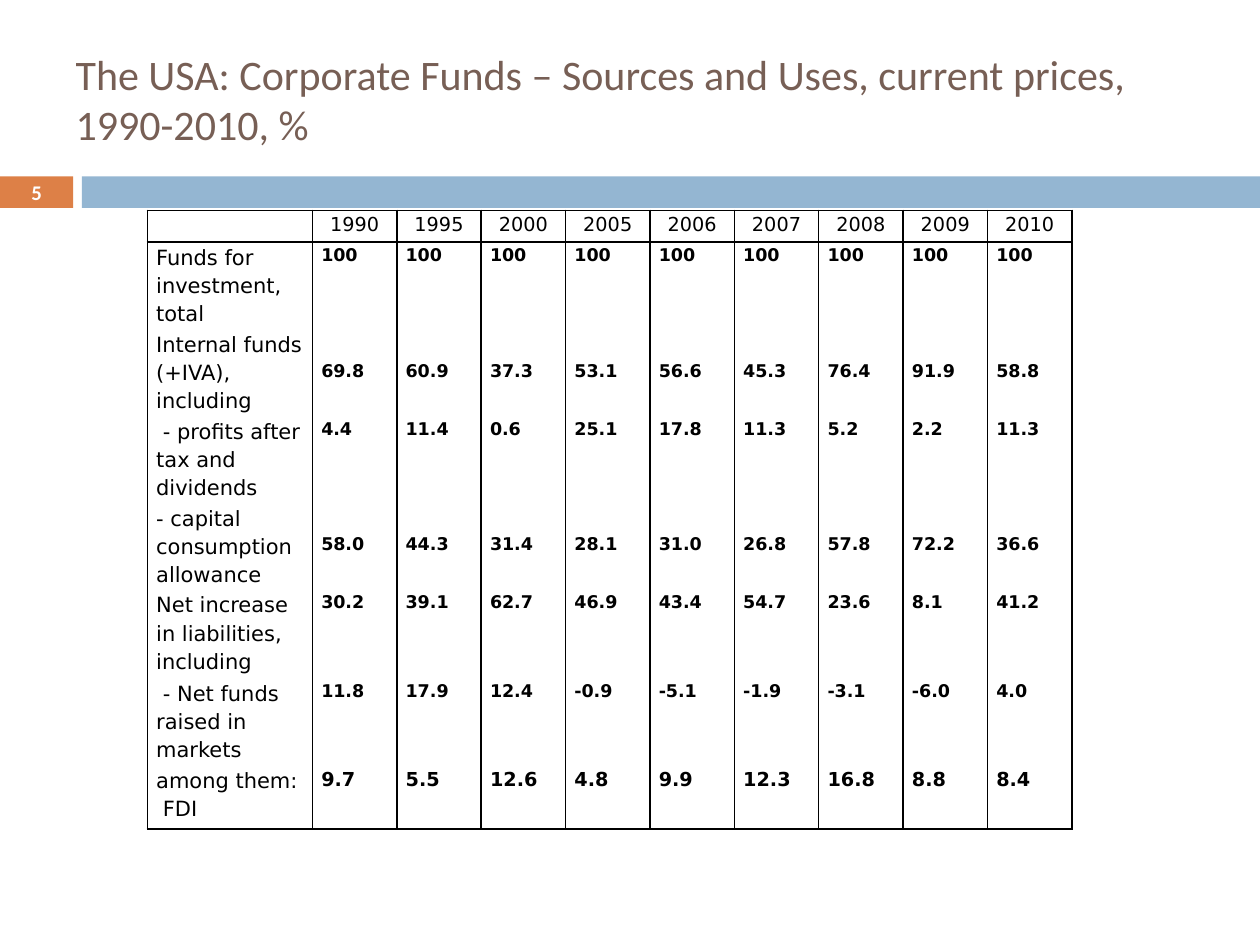
from lxml.etree import SubElement
from pptx import Presentation
from pptx.dml.color import RGBColor
from pptx.enum.shapes import MSO_SHAPE
from pptx.enum.text import MSO_ANCHOR, PP_ALIGN
from pptx.oxml.ns import qn
from pptx.util import Inches, Pt

TITLE = "The USA: Corporate Funds – Sources and Uses, current prices, 1990-2010, %"
PAGE_NUMBER = "5"
YEARS = ["1990", "1995", "2000", "2005", "2006", "2007", "2008", "2009", "2010"]
# Row height, label lines, label row span, values, value size
ROWS = [
    (0.62, ["Funds for investment,", "total"], 1, ["100"] * len(YEARS), 10),
    (0.23, ["Internal funds (+IVA),", "including"], 2, [], 10),
    (0.39, [], 1, ["69.8", "60.9", "37.3", "53.1", "56.6", "45.3", "76.4", "91.9", "58.8"], 10),
    (0.66, [" - profits after tax and dividends"], 1,
     ["4.4", "11.4", "0.6", "25.1", "17.8", "11.3", "5.2", "2.2", "11.3"], 10),
    (0.23, ["- capital consumption allowance"], 2, [], 10),
    (0.39, [], 1, ["58.0", "44.3", "31.4", "28.1", "31.0", "26.8", "57.8", "72.2", "36.6"], 10),
    (0.70, ["Net increase in liabilities, including"], 1,
     ["30.2", "39.1", "62.7", "46.9", "43.4", "54.7", "23.6", "8.1", "41.2"], 10),
    (0.67, [" - Net funds raised in markets"], 1,
     ["11.8", "17.9", "12.4", "-0.9", "-5.1", "-1.9", "-3.1", "-6.0", "4.0"], 10),
    (0.51, ["among them:  FDI"], 1,
     ["9.7", "5.5", "12.6", "4.8", "9.9", "12.3", "16.8", "8.8", "8.4"], 11),
]
HEADER_HEIGHT = 0.25
LABEL_WIDTH, VALUE_WIDTH = 1.31, 0.67


def color(value):
    return RGBColor.from_string(value)


def add_span(para, text, size, font, hex_color, bold=False):
    span = para.add_run()
    span.text = text
    span.font.size = Pt(size)
    span.font.name = font
    span.font.bold = bold
    span.font.color.rgb = color(hex_color)


def add_bar(page, left, width, fill):
    bar = page.shapes.add_shape(MSO_SHAPE.RECTANGLE, Inches(left), Inches(1.4),
                                Inches(width), Inches(0.25))
    bar.shadow.inherit = False
    bar.fill.solid()
    bar.fill.fore_color.rgb = color(fill)
    bar.line.fill.background()


def set_borders(cell, edges):
    """Draw black 1 pt lines on the given edges (letters of LRTB), none elsewhere."""
    properties = cell._tc.get_or_add_tcPr()
    for edge in "LRTB":
        line = SubElement(properties, qn(f"a:ln{edge}"), w=str(Pt(1)))
        if edge in edges:
            fill = SubElement(line, qn("a:solidFill"))
            SubElement(fill, qn("a:srgbClr"), val="000000")
        else:
            SubElement(line, qn("a:noFill"))


def fill_cell(cell, lines, size, edges, bold=False, align=PP_ALIGN.LEFT):
    cell.margin_left = cell.margin_right = Inches(0.07)
    cell.margin_top = cell.margin_bottom = 0
    set_borders(cell, edges)
    cell.fill.background()
    frame = cell.text_frame
    for index, text in enumerate(lines):
        para = frame.add_paragraph() if index else frame.paragraphs[0]
        para.alignment = align
        para.line_spacing = 1.15
        add_span(para, text, size, "DejaVu Sans", "000000", bold)
    if not lines:  # keeps an empty cell from stretching its row
        SubElement(frame.paragraphs[0]._p, qn("a:endParaRPr"), sz=str(size * 100))


def add_funds_table(page):
    heights = [HEADER_HEIGHT] + [row[0] for row in ROWS]
    widths = [LABEL_WIDTH] + [VALUE_WIDTH] * len(YEARS)
    table = page.shapes.add_table(len(heights), len(widths), Inches(1.17), Inches(1.67),
                                  Inches(sum(widths)), Inches(sum(heights))).table
    table.first_row = table.horz_banding = False
    for row, height in zip(table.rows, heights):
        row.height = Inches(height)
    for column, width in zip(table.columns, widths):
        column.width = Inches(width)

    for index, year in enumerate([""] + YEARS):
        fill_cell(table.cell(0, index), [year] if year else [], 11, "LRTB",
                  align=PP_ALIGN.CENTER)
    for number, (_, label, span, values, size) in enumerate(ROWS, start=1):
        edges = "LR" + "T" * (number == 1) + "B" * (number == len(ROWS))
        fill_cell(table.cell(number, 0), label, 12, edges)
        for index in range(len(YEARS)):
            fill_cell(table.cell(number, index + 1), values[index:index + 1], size, edges, True)
        if span > 1:
            table.cell(number, 0).merge(table.cell(number + span - 1, 0))


def main():
    deck = Presentation()
    deck.slide_width, deck.slide_height = Inches(10), Inches(7.5)
    page = deck.slides.add_slide(deck.slide_layouts[5])

    add_bar(page, 0, 0.58, "DD8047")
    add_bar(page, 0.65, 9.35, "94B6D2")

    title = page.shapes.title
    title.left, title.top = Inches(0.5), Inches(0)
    title.width, title.height = Inches(9.17), Inches(1.57)
    title.text_frame.vertical_anchor = MSO_ANCHOR.MIDDLE
    para = title.text_frame.paragraphs[0]
    para.alignment = PP_ALIGN.LEFT
    add_span(para, TITLE, 24, "Calibri", "775F55")

    box = page.shapes.add_textbox(Inches(0), Inches(1.39), Inches(0.58), Inches(0.27))
    frame = box.text_frame
    frame.word_wrap = True
    frame.vertical_anchor = MSO_ANCHOR.MIDDLE
    frame.margin_top = frame.margin_bottom = 0
    frame.paragraphs[0].alignment = PP_ALIGN.CENTER
    add_span(frame.paragraphs[0], PAGE_NUMBER, 11.9, "Calibri", "FFFFFF", True)

    add_funds_table(page)
    deck.save("out.pptx")


if __name__ == "__main__":
    main()
